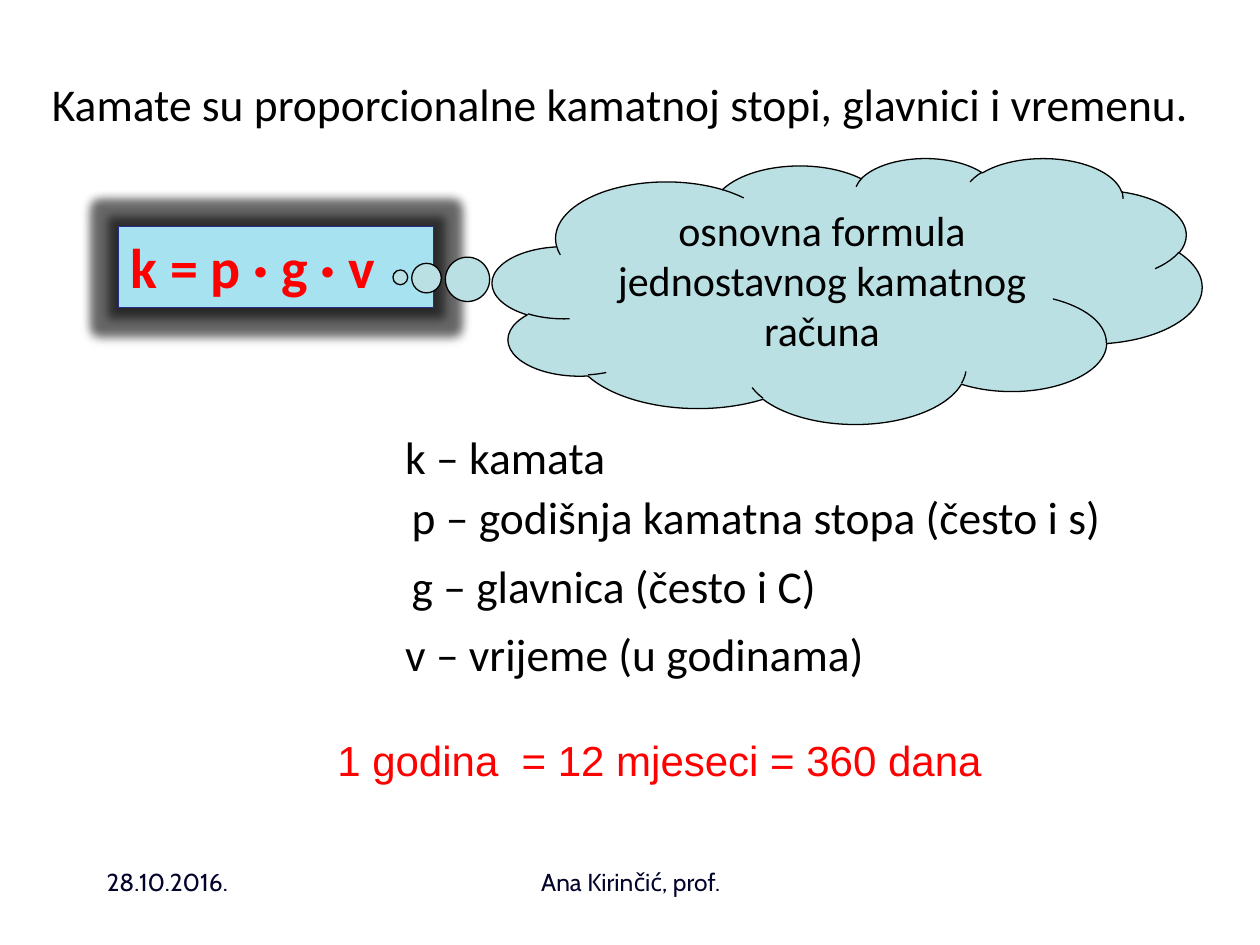
from lxml import etree
from pptx import Presentation
from pptx.dml.color import RGBColor
from pptx.enum import shapes, text
from pptx.oxml import ns
from pptx.util import Cm, Pt

BLACK = RGBColor(0x00, 0x00, 0x00)
RED = RGBColor(0xFF, 0x00, 0x00)
NAVY = RGBColor(0x03, 0x04, 0x2B)
EDGE = RGBColor(0x2A, 0x2A, 0x89)
SKY = RGBColor(0xA6, 0xE2, 0xF0)
TEAL = RGBColor(0xBB, 0xE0, 0xE3)
MID = text.PP_ALIGN.CENTER

# Content; boxes are left, top, width, height in cm
TITLE = ("Kamate su proporcionalne kamatnoj stopi, glavnici i vremenu.",
         (0.79, 1.4, 23.47, 1.37))
FORMULA = ("k = p · g · v", (2.39, 4.57, 6.35, 1.63))
CLOUD = ("osnovna formula jednostavnog kamatnog računa",
         (9.93, 3.18, 14.3, 5.36))
TERMS = [
    ("k – kamata", (7.92, 8.53, 4.6, 1.37), False),
    ("p – godišnja kamatna stopa (često i s)", (8.05, 9.73, 16.15, 1.37), True),
    ("g – glavnica (često i C)", (8.05, 11.13, 11, 1.37), True),
    ("v – vrijeme (u godinama)", (7.92, 12.5, 9.86, 1.37), False),
]
YEAR = ("1 godina\u00a0 = 12 mjeseci = 360 dana", (6.55, 14.68, 18.47, 1.27))
FOOT = [
    ("28.10.2016.", (1.9, 17.35, 5.28, 1.27), None),
    ("Ana Kirinčić, prof.", (8.69, 17.35, 8.05, 1.27), MID),
]
GLOW = f"""<a:effectLst xmlns:a="{ns.nsuri('a')}">
  <a:glow rad="139700"><a:srgbClr val="000000"><a:alpha val="50000"/></a:srgbClr></a:glow>
  <a:outerShdw blurRad="40000" dist="20000" dir="5400000" rotWithShape="0">
    <a:srgbClr val="000000"><a:alpha val="38000"/></a:srgbClr></a:outerShdw>
</a:effectLst>"""


def write(shape, words, size=26, font="Calibri", color=BLACK, bold=False,
          align=None, wrap=True):
    frame = shape.text_frame
    frame.word_wrap = wrap
    frame.auto_size = text.MSO_AUTO_SIZE.NONE
    frame.vertical_anchor = text.MSO_ANCHOR.TOP
    para = frame.paragraphs[0]
    para.alignment = align or text.PP_ALIGN.LEFT
    run = para.add_run()
    run.text = words
    run.font.size = Pt(size)
    run.font.name = font
    run.font.bold = bold
    run.font.color.rgb = color


def label(slide, words, box, **style):
    write(slide.shapes.add_textbox(*map(Cm, box)), words, **style)


def panel(slide, kind, box, fill, line):
    shape = slide.shapes.add_shape(kind, *map(Cm, box))
    shape.shadow.inherit = False
    shape.fill.solid()
    shape.fill.fore_color.rgb = fill
    shape.line.color.rgb = line
    shape.line.width = Pt(0.75)
    return shape


def main():
    deck = Presentation()
    deck.slide_width, deck.slide_height = Cm(25.4), Cm(19.05)
    slide = deck.slides.add_slide(deck.slide_layouts[5])

    # Title
    words, box = TITLE
    title = slide.shapes.title
    title.left, title.top, title.width, title.height = map(Cm, box)
    write(title, words)

    # Date and author
    for words, box, align in FOOT:
        label(slide, words, box, size=14, font="Cabin", color=NAVY, align=align)

    # Meaning of each symbol
    for words, box, wrap in TERMS:
        label(slide, words, box, wrap=wrap)

    # Formula with a dark glow
    words, box = FORMULA
    rect = panel(slide, shapes.MSO_SHAPE.RECTANGLE, box, SKY, EDGE)
    props = rect.element.spPr
    props.replace(props.find(ns.qn("a:effectLst")), etree.fromstring(GLOW))
    write(rect, words, size=32, color=RED, bold=True)

    # Thought cloud pointing at the formula
    words, box = CLOUD
    cloud = panel(slide, shapes.MSO_SHAPE.CLOUD_CALLOUT, box, TEAL, BLACK)
    cloud.adjustments[0], cloud.adjustments[1] = -0.63, -0.05
    write(cloud, words, size=24, align=MID)

    # Length of a year
    label(slide, *YEAR, size=24, font="Arial", color=RED)

    deck.save("out.pptx")


if __name__ == "__main__":
    main()
